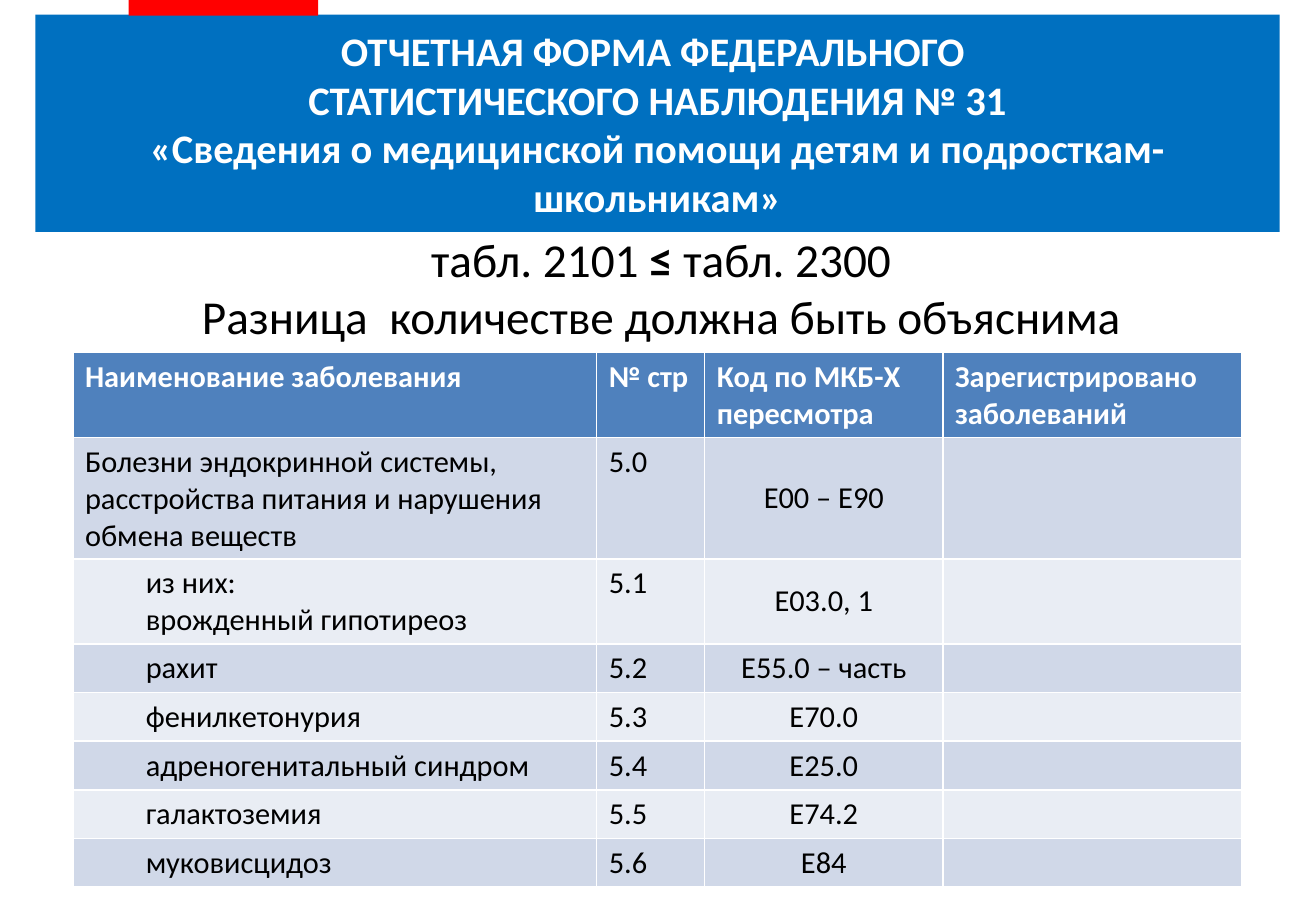
from pptx import Presentation
from pptx.dml.color import RGBColor
from pptx.enum.shapes import MSO_SHAPE
from pptx.enum.text import MSO_ANCHOR, MSO_AUTO_SIZE, PP_ALIGN
from pptx.util import Inches, Pt

RECT = MSO_SHAPE.RECTANGLE
MIDDLE = MSO_ANCHOR.MIDDLE
CENTER = PP_ALIGN.CENTER
FIXED = MSO_AUTO_SIZE.NONE


def paint(fill, color):
    fill.solid()
    fill.fore_color.rgb = RGBColor.from_string(color)


def write(para, text, size, color="000000", bold=False):
    run = para.add_run()
    run.text = text
    run.font.name = "Calibri"
    run.font.size = Pt(size)
    run.font.bold = bold
    paint(run.font.fill, color)


deck = Presentation()
deck.slide_width = Inches(10.83)
deck.slide_height = Inches(7.5)
slide = deck.slides.add_slide(deck.slide_layouts[5])

title = slide.shapes.title
title.left, title.top = Inches(0.29), Inches(0.12)
title.width, title.height = Inches(10.24), Inches(1.79)
paint(title.fill, "0070C0")
frame = title.text_frame
frame.auto_size = FIXED
frame.word_wrap = True
frame.vertical_anchor = MIDDLE
para = frame.paragraphs[0]
para.alignment = CENTER
lines = [
    "ОТЧЕТНАЯ ФОРМА ФЕДЕРАЛЬНОГО ",
    "СТАТИСТИЧЕСКОГО НАБЛЮДЕНИЯ № 31",
    "«Сведения о медицинской помощи детям и подросткам-школьникам»",
]
for i, line in enumerate(lines):
    if i:
        para.add_line_break()
    write(para, line, 24, "FFFFFF", True)

tab = slide.shapes.add_shape(
    RECT, Inches(1.06), Inches(-0.03), Inches(1.56), Inches(0.16))
tab.shadow.inherit = False
paint(tab.fill, "FF0000")
tab.line.fill.background()

note = slide.shapes.add_textbox(
    Inches(0.24), Inches(1.85), Inches(10.4), Inches(1.04))
frame = note.text_frame
frame.word_wrap = True
rule = frame.paragraphs[0]
rule.alignment = CENTER
write(rule, "табл. 2101 ", 28)
write(rule, "≤", 28, bold=True)
write(rule, " табл. 2300", 28)
claim = frame.add_paragraph()
claim.alignment = CENTER
write(claim, "Разница  количестве должна быть объяснима", 28)

head = ["Наименование заболевания", "№ стр",
        "Код по МКБ-Х пересмотра", "Зарегистрировано заболеваний"]
items = [
    ("Болезни эндокринной системы, расстройства питания и нарушения "
     "обмена веществ", "Е00 – Е90"),
    ("из них:\nврожденный гипотиреоз", "Е03.0, 1"),
    ("рахит", "Е55.0 – часть"),
    ("фенилкетонурия", "Е70.0"),
    ("адреногенитальный синдром", "Е25.0"),
    ("галактоземия", "Е74.2"),
    ("муковисцидоз", "Е84"),
]
rows = [head] + [[name, f"5.{i}", code, ""]
                 for i, (name, code) in enumerate(items)]
widths = [4.31, 0.89, 1.96, 2.46]
heights = [0.67, 0.95, 0.56, 0.38, 0.38, 0.38, 0.38, 0.36]

grid = slide.shapes.add_table(
    len(rows), len(widths), Inches(0.6), Inches(2.9),
    Inches(sum(widths)), Inches(sum(heights))).table
for col, width in zip(grid.columns, widths):
    col.width = Inches(width)
for row, height in zip(grid.rows, heights):
    row.height = Inches(height)

for r, row in enumerate(rows):
    shade = "4F81BD" if r == 0 else ("E9EDF4", "D0D8E8")[r % 2]
    ink = "FFFFFF" if r == 0 else "000000"
    for c, text in enumerate(row):
        cell = grid.cell(r, c)
        paint(cell.fill, shade)
        if not text:
            continue
        frame = cell.text_frame
        for i, line in enumerate(text.split("\n")):
            para = frame.add_paragraph() if i else frame.paragraphs[0]
            write(para, line, 18, ink, r == 0)
            if c == 0 and r > 1:
                para.level = 1
                para._p.get_or_add_pPr().set("marL", str(Inches(0.5)))
            if c == 2 and r:
                para.alignment = CENTER
                cell.vertical_anchor = MIDDLE

deck.save("out.pptx")
